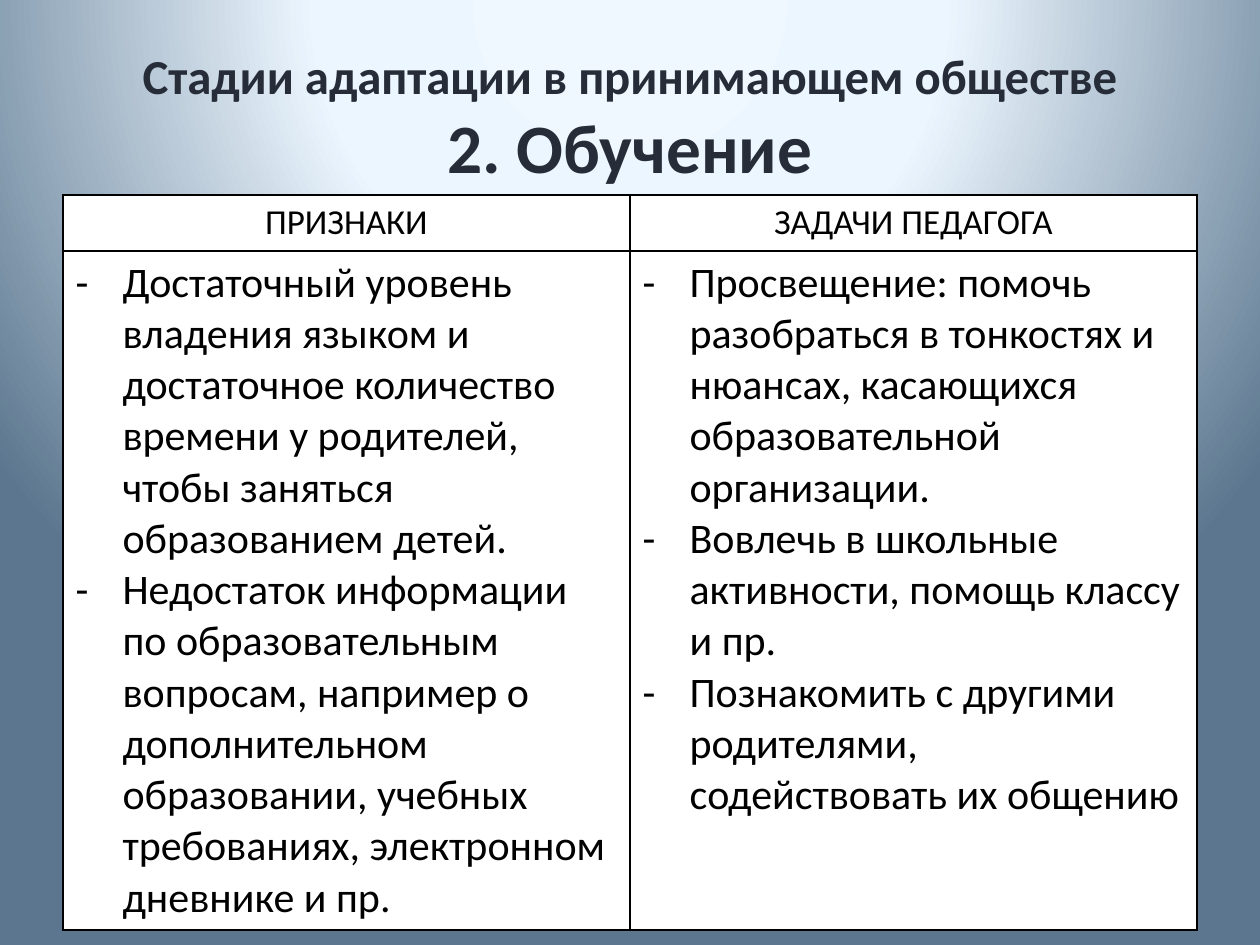
from dataclasses import dataclass

from lxml import etree
from pptx import Presentation
from pptx.dml.color import RGBColor
from pptx.enum.text import MSO_ANCHOR, MSO_AUTO_SIZE, PP_ALIGN
from pptx.oxml import parse_xml
from pptx.oxml.ns import nsdecls, qn
from pptx.util import Emu, Pt


@dataclass(frozen=True)
class Theme:
    font: str = "Calibri"
    title: str = "272D38"
    text: str = "000000"
    border: str = "000000"
    cell: str = "FFFFFF"
    glow: tuple = ((0, "F0F8FF"), (40, "ECF6FF"), (100, "5B768E"))
    topic_size: float = 27.9
    stage_size: float = 39.6
    header_size: int = 20
    body_size: int = 24


THEME = Theme()


def px(length):
    return Emu(round(length * 914400 / 126))


def style_run(run, size, color, bold=False):
    formats = {"name": THEME.font, "size": Pt(size), "bold": bold}
    for attribute, value in formats.items():
        setattr(run.font, attribute, value)
    run.font.color.rgb = RGBColor.from_string(color)


HEADERS = ["ПРИЗНАКИ", "ЗАДАЧИ ПЕДАГОГА"]
POINTS = [
    [
        "Достаточный уровень владения языком и достаточное количество времени "
        "у родителей, чтобы заняться образованием детей.",
        "Недостаток информации по образовательным вопросам, например о "
        "дополнительном образовании, учебных требованиях, электронном "
        "дневнике и пр.",
    ],
    [
        "Просвещение: помочь разобраться в тонкостях и нюансах, касающихся "
        "образовательной организации.",
        "Вовлечь в школьные активности, помощь классу и пр.",
        "Познакомить с другими родителями, содействовать их общению",
    ],
]

prs = Presentation()
prs.slide_width, prs.slide_height = px(1260), px(945)
slide = prs.slides.add_slide(prs.slide_layouts[5])

# Background: round glow centred above the slide
background = slide.background.fill
background.gradient()
stops = "".join(
    f'<a:gs pos="{position * 1000}"><a:srgbClr val="{color}"/></a:gs>'
    for position, color in THEME.glow
)
glow = parse_xml(
    f'<a:gradFill {nsdecls("a")} rotWithShape="1"><a:gsLst>{stops}</a:gsLst>'
    '<a:path path="circle"><a:fillToRect l="50000" t="-80000" r="50000" b="180000"/>'
    "</a:path></a:gradFill>"
)
default_gradient = next(slide.element.iter(qn("a:gradFill")))
default_gradient.getparent().replace(default_gradient, glow)

# Title: topic and stage on two lines
title = slide.shapes.title
title.left, title.top, title.width, title.height = px(63), px(38), px(1134), px(157)
title_frame = title.text_frame
title_frame.auto_size = MSO_AUTO_SIZE.NONE
title_frame.vertical_anchor = MSO_ANCHOR.MIDDLE
heading = title_frame.paragraphs[0]
heading.alignment = PP_ALIGN.CENTER
topic = heading.add_run()
topic.text = "Стадии адаптации в принимающем обществе"
style_run(topic, THEME.topic_size, THEME.title, bold=True)
heading.add_line_break()
line_break = next(title.element.iter(qn("a:br")))
etree.SubElement(line_break, qn("a:rPr"), sz=str(round(THEME.topic_size * 100)))
stage = heading.add_run()
stage.text = "2. Обучение"
style_run(stage, THEME.stage_size, THEME.title, bold=True)

# Table of signs and teacher's tasks
table = slide.shapes.add_table(2, 2, px(63), px(195), px(1134), px(735)).table
table.first_row = False
table.horz_banding = False
for row, height in zip(table.rows, (56, 679)):
    row.height = px(height)

# Cell borders and fill
for cell in table.iter_cells():
    properties = cell._tc.get_or_add_tcPr()
    for side in ("lnL", "lnR", "lnT", "lnB"):
        properties.append(parse_xml(
            f'<a:{side} {nsdecls("a")} w="12700"><a:solidFill>'
            f'<a:srgbClr val="{THEME.border}"/></a:solidFill></a:{side}>'
        ))
    cell.fill.solid()
    cell.fill.fore_color.rgb = RGBColor.from_string(THEME.cell)

# Column headers and dashed lists
for column, (header, points) in enumerate(zip(HEADERS, POINTS)):
    header_line = table.cell(0, column).text_frame.paragraphs[0]
    header_line.alignment = PP_ALIGN.CENTER
    header_run = header_line.add_run()
    header_run.text = header
    style_run(header_run, THEME.header_size, THEME.text)

    body = table.cell(1, column).text_frame
    for index, point in enumerate(points):
        item = body.add_paragraph() if index else body.paragraphs[0]
        indent = item._p.get_or_add_pPr()
        indent.set("marL", str(px(47)))
        indent.set("indent", str(-px(47)))
        etree.SubElement(indent, qn("a:buFont"), typeface=THEME.font)
        etree.SubElement(indent, qn("a:buChar"), char="-")
        item_run = item.add_run()
        item_run.text = point
        style_run(item_run, THEME.body_size, THEME.text)

prs.save("out.pptx")
